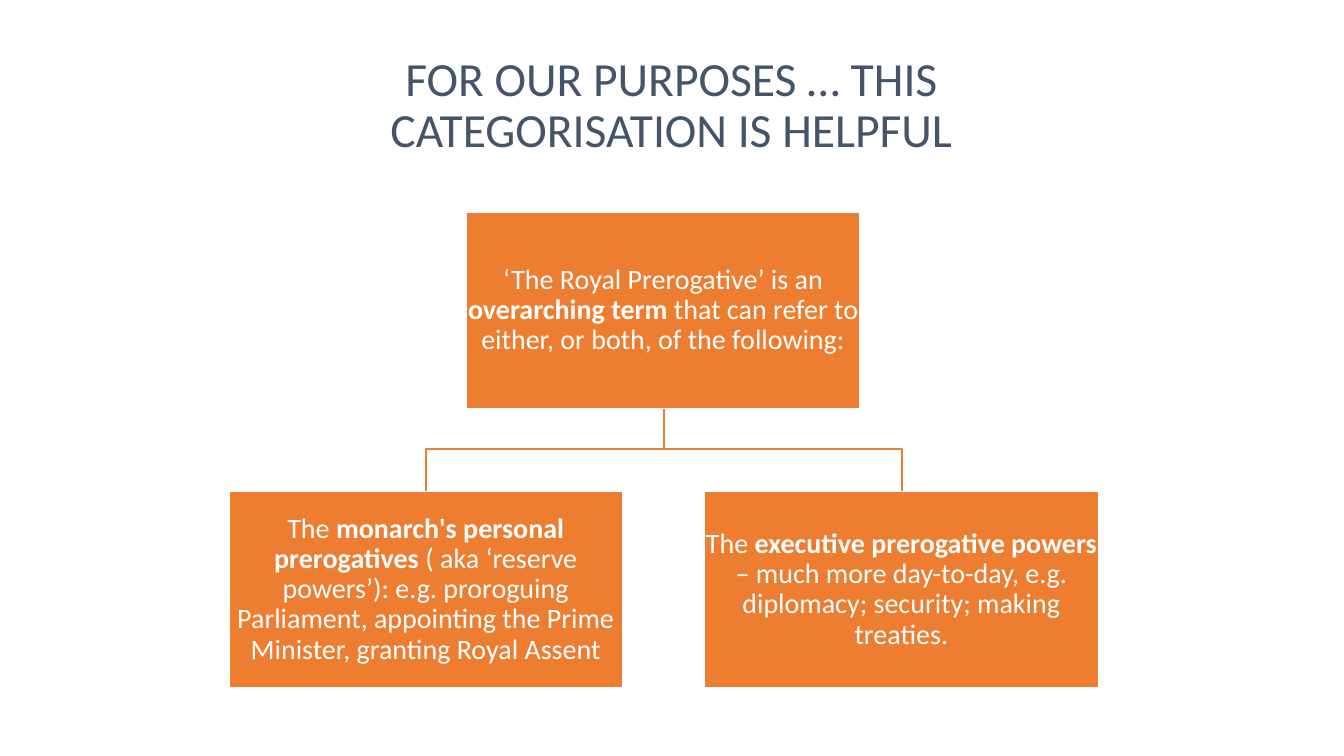
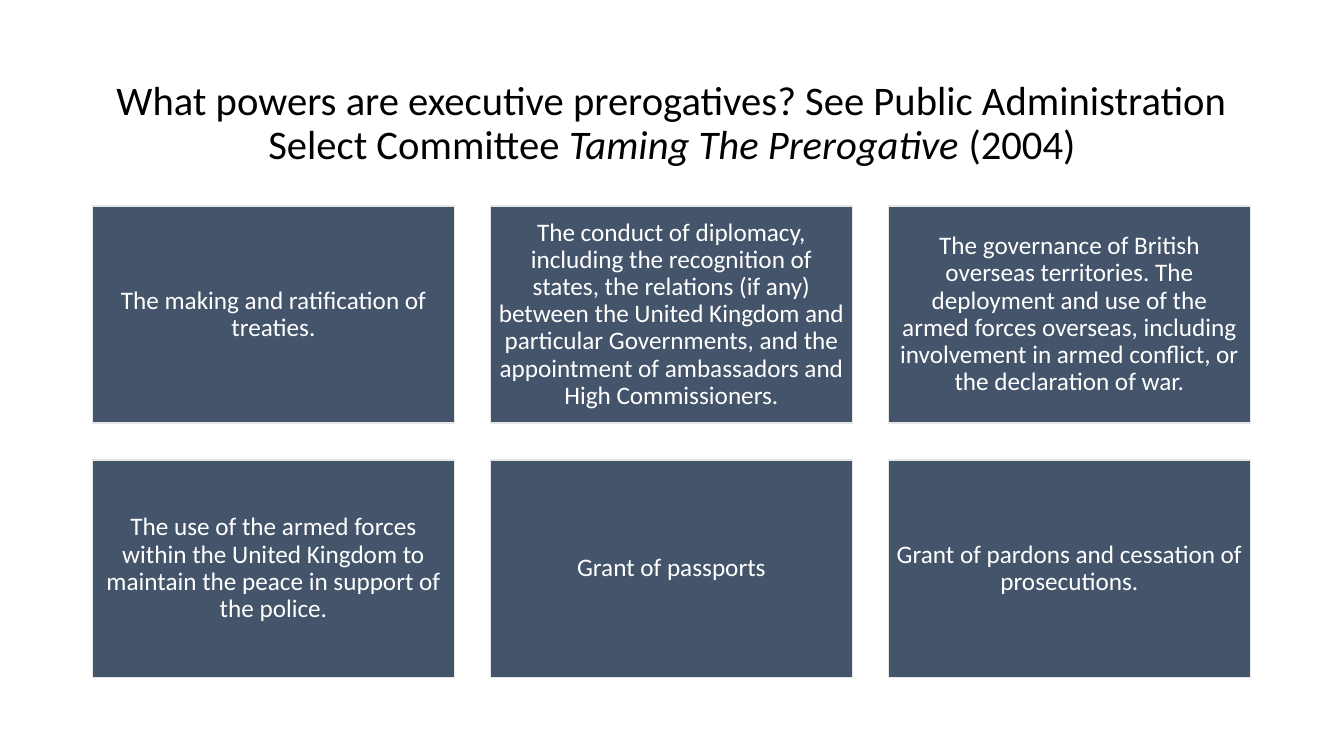
from dataclasses import dataclass

import pptx
import pptx.dml.color
import pptx.enum.shapes
import pptx.enum.text
import pptx.presentation
import pptx.shapes.base
import pptx.slide
import pptx.text.text
import pptx.util

EMU_PER_PX = 9525
ORANGE = "ED7D31"
SLATE = "44546A"
PALE_GREY = "E7E6E6"
WHITE = "FFFFFF"
BLACK = "000000"


@dataclass(frozen=True)
class Box:
    left: int
    top: int
    width: int
    height: int

    @property
    def centre(self) -> int:
        return self.left + (self.width + 1) // 2

    @property
    def bottom(self) -> int:
        return self.top + self.height


@dataclass(frozen=True)
class Run:
    text: str
    bold: bool = False
    italic: bool = False


@dataclass(frozen=True)
class TextStyle:
    size: int
    color: str
    inset_x: int
    inset_y: int


@dataclass(frozen=True)
class CardStyle:
    fill: str
    border: str
    text: TextStyle


CATEGORY = CardStyle(ORANGE, WHITE, TextStyle(20, WHITE, 1, 1))
POWER = CardStyle(SLATE, PALE_GREY, TextStyle(18, WHITE, 7, 7))

OVERARCHING = (
    Run("‘The Royal Prerogative’ is an "),
    Run("overarching term ", bold=True),
    Run("that can refer to either, or both, of the following:"),
)
BRANCHES = (
    (
        Run("The "),
        Run("monarch's personal prerogatives ", bold=True),
        Run(
            "( aka ‘reserve powers’): e.g. proroguing Parliament, "
            "appointing the Prime Minister, granting Royal Assent"
        ),
    ),
    (
        Run("The "),
        Run("executive prerogative powers ", bold=True),
        Run("– much more day-to-day, e.g. diplomacy; security; making treaties."),
    ),
)
POWERS = (
    "The making and ratification of treaties.",
    "The conduct of diplomacy, including the recognition of states, the relations "
    "(if any) between the United Kingdom and particular Governments, and the "
    "appointment of ambassadors and High Commissioners.",
    "The governance of British overseas territories. The deployment and use of the "
    "armed forces overseas, including involvement in armed conflict, or the "
    "declaration of war.",
    "The use of the armed forces within the United Kingdom to maintain the peace "
    "in support of the police.",
    "Grant of passports",
    "Grant of pardons and cessation of prosecutions.",
)


def px(length: int) -> pptx.util.Emu:
    return pptx.util.Emu(length * EMU_PER_PX)


def rgb(value: str) -> pptx.dml.color.RGBColor:
    return pptx.dml.color.RGBColor.from_string(value)


def place(box: Box) -> tuple[pptx.util.Emu, ...]:
    return px(box.left), px(box.top), px(box.width), px(box.height)


def apply(target: object, values: dict[str, object]) -> None:
    for attribute, value in values.items():
        setattr(target, attribute, value)


def write(
    frame: pptx.text.text.TextFrame, runs: tuple[Run, ...], style: TextStyle
) -> None:
    apply(frame, {
        "word_wrap": True,
        "vertical_anchor": pptx.enum.text.MSO_ANCHOR.MIDDLE,
        "margin_left": px(style.inset_x),
        "margin_right": px(style.inset_x),
        "margin_top": px(style.inset_y),
        "margin_bottom": px(style.inset_y),
    })
    paragraph = frame.paragraphs[0]
    apply(paragraph, {
        "alignment": pptx.enum.text.PP_ALIGN.CENTER,
        "line_spacing": 0.9,
    })
    for run in runs:
        words = paragraph.add_run()
        words.text = run.text
        apply(words.font, {
            "name": "Calibri",
            "size": pptx.util.Pt(style.size),
            "bold": run.bold,
            "italic": run.italic,
        })
        words.font.color.rgb = rgb(style.color)


def outline(shape: pptx.shapes.base.BaseShape, color: str, points: float) -> None:
    shape.shadow.inherit = False
    shape.line.color.rgb = rgb(color)
    shape.line.width = pptx.util.Pt(points)


def add_title(
    slide: pptx.slide.Slide, box: Box, runs: tuple[Run, ...], size: int, color: str
) -> None:
    title = slide.shapes.add_textbox(*place(box))
    write(title.text_frame, runs, TextStyle(size, color, 10, 5))


def add_card(
    slide: pptx.slide.Slide, box: Box, runs: tuple[Run, ...], style: CardStyle
) -> None:
    card = slide.shapes.add_shape(
        pptx.enum.shapes.MSO_SHAPE.RECTANGLE, *place(box)
    )
    card.fill.solid()
    card.fill.fore_color.rgb = rgb(style.fill)
    outline(card, style.border, 1)
    write(card.text_frame, runs, style.text)


def add_branch_line(slide: pptx.slide.Slide, parent: Box, child: Box) -> None:
    middle = (parent.bottom + child.top) // 2
    builder = slide.shapes.build_freeform(
        parent.centre, parent.bottom, scale=EMU_PER_PX
    )
    builder.add_line_segments(
        [
            (parent.centre, middle),
            (child.centre, middle),
            (child.centre, child.top),
        ],
        close=False,
    )
    branch = builder.convert_to_shape()
    branch.fill.background()
    outline(branch, ORANGE, 1.5)


def add_slide(deck: pptx.presentation.Presentation) -> pptx.slide.Slide:
    return deck.slides.add_slide(deck.slide_layouts[6])


def build_categories(deck: pptx.presentation.Presentation) -> None:
    slide = add_slide(deck)
    add_title(
        slide,
        Box(234, 39, 811, 125),
        (Run("FOR OUR PURPOSES … THIS CATEGORISATION IS HELPFUL"),),
        34,
        SLATE,
    )
    width, height, gap, left = 375, 187, 78, 218
    parent = Box(left + (width + gap) // 2, 202, width, height)
    children = [
        Box(left + index * (width + gap), 468, width, height)
        for index in range(len(BRANCHES))
    ]
    for child in children:
        add_branch_line(slide, parent, child)
    add_card(slide, parent, OVERARCHING, CATEGORY)
    for child, runs in zip(children, BRANCHES):
        add_card(slide, child, runs, CATEGORY)


def build_powers(deck: pptx.presentation.Presentation) -> None:
    slide = add_slide(deck)
    add_title(
        slide,
        Box(88, 59, 1104, 119),
        (
            Run(
                "What powers are executive prerogatives? "
                "See Public Administration Select Committee "
            ),
            Run("Taming The Prerogative ", italic=True),
            Run("(2004)"),
        ),
        29,
        BLACK,
    )
    columns, width, height, gap = 3, 345, 207, 35
    for index, power in enumerate(POWERS):
        row, column = divmod(index, columns)
        box = Box(
            88 + column * (width + gap - 1), 196 + row * (height + gap), width, height
        )
        add_card(slide, box, (Run(power),), POWER)


def main() -> None:
    deck = pptx.Presentation()
    apply(deck, {"slide_width": px(1280), "slide_height": px(720)})
    build_categories(deck)
    build_powers(deck)
    deck.save("out.pptx")


if __name__ == "__main__":
    main()
